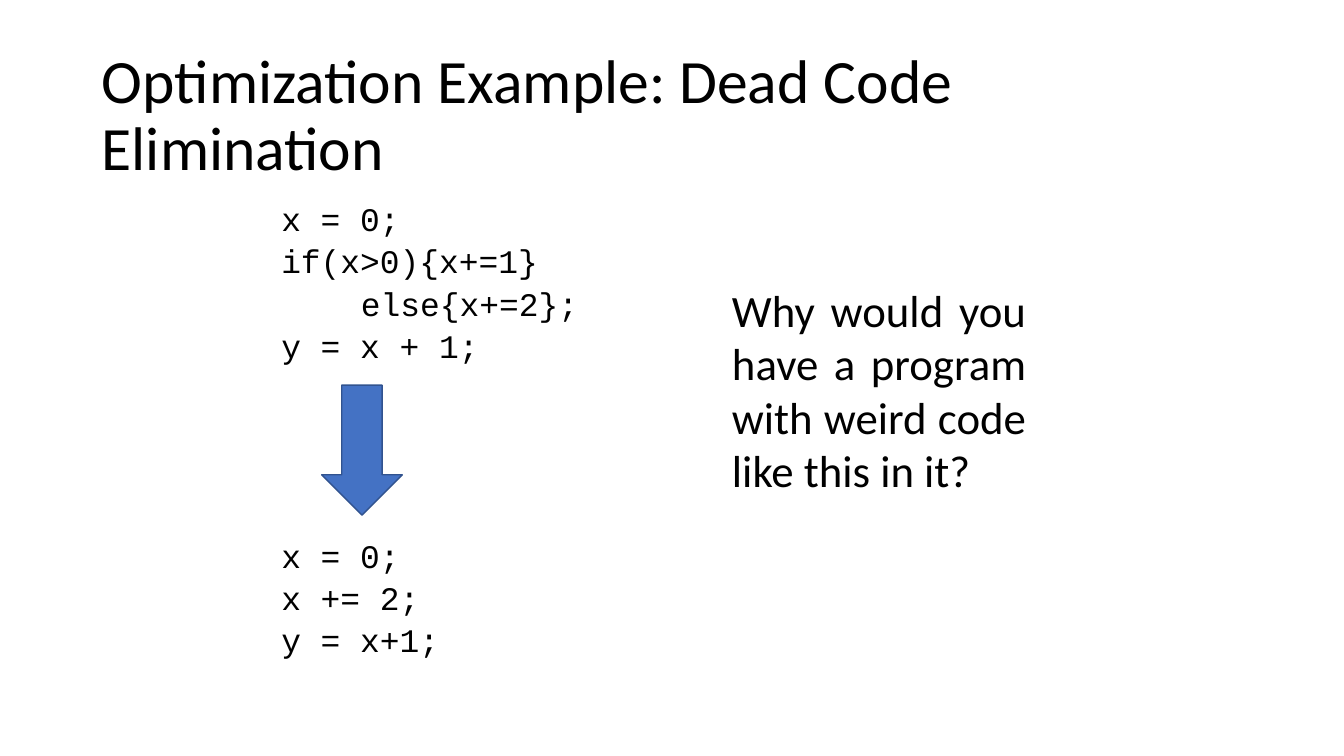
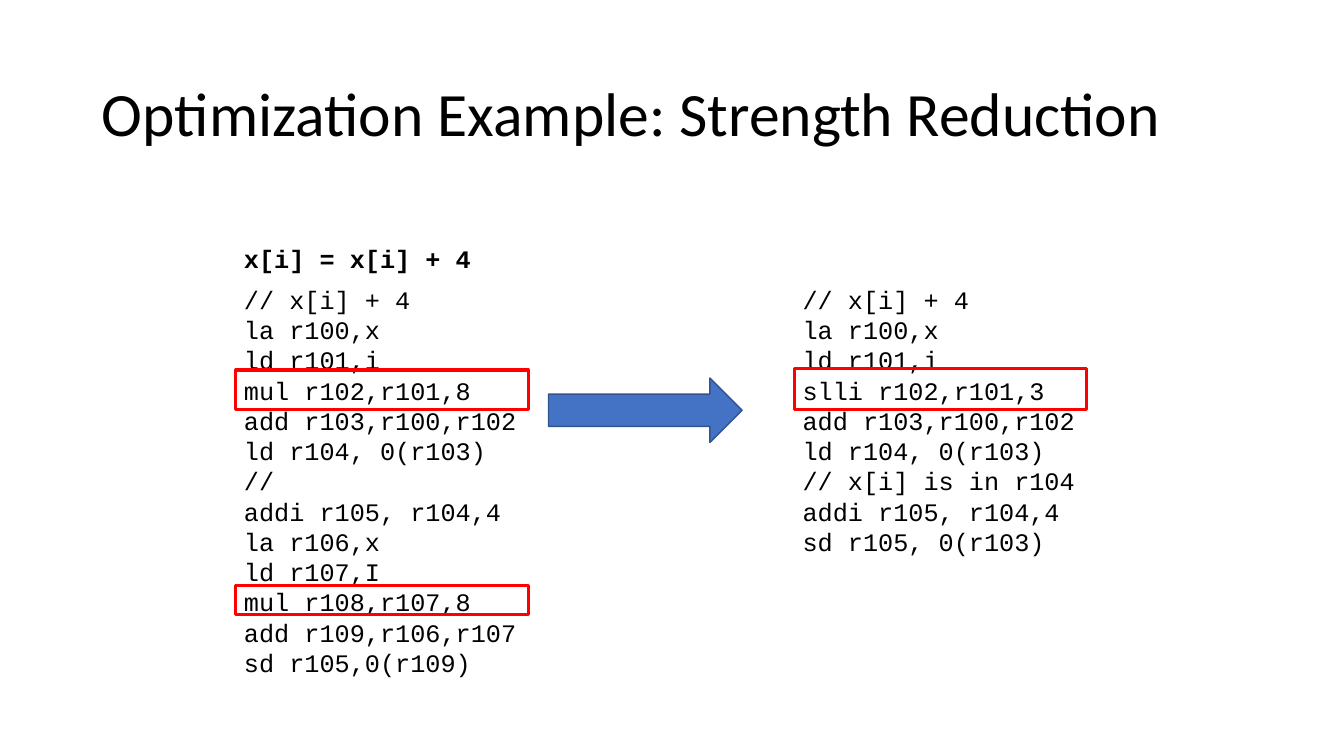
from pptx import Presentation
from pptx.dml.color import RGBColor
from pptx.enum.shapes import MSO_SHAPE as Shape
from pptx.enum.text import MSO_ANCHOR as Anchor, MSO_AUTO_SIZE as AutoSize, PP_ALIGN as Align
from pptx.util import Pt

SCALE = 9144
SLIDE_SIZE = (1333, 750)
TITLE_BOX = (101, 37, 1100, 156)
BLACK, BLUE, NAVY, RED = "000000", "4472C4", "31538F", "FF0000"
BODY_FONT, CODE_FONT = "Calibri", "Courier New"
LINE_STEP = 30


def px(length):
    """Turn px into EMU."""
    return length * SCALE


def colour(hex_code):
    """Turn a hex string into a colour."""
    return RGBColor.from_string(hex_code)


def style(paragraph, font_name, size, pitch, align=Align.LEFT):
    """Set the font, line pitch and alignment of a paragraph."""
    font = paragraph.font
    font.name, font.size = font_name, Pt(size)
    font.color.rgb = colour(BLACK)
    paragraph.line_spacing = Pt(pitch)
    paragraph.alignment = align


def clear_frame(frame, anchor=Anchor.TOP):
    """Make a text frame wrap, without margins or resizing."""
    frame.margin_left = frame.margin_right = frame.margin_top = frame.margin_bottom = 0
    frame.word_wrap = True
    frame.auto_size = AutoSize.NONE
    frame.vertical_anchor = anchor


def add_titled_slide(deck, heading):
    """Add a title-only slide with the shared title style."""
    slide = deck.slides.add_slide(deck.slide_layouts[5])
    title = slide.shapes.title
    title.left, title.top, title.width, title.height = map(px, TITLE_BOX)
    title.text_frame.text = heading
    clear_frame(title.text_frame, Anchor.MIDDLE)
    style(title.text_frame.paragraphs[0], BODY_FONT, 44, 47.5)
    return slide


def add_text(slide, box, lines, font_name, size, pitch, align=Align.LEFT):
    """Write one paragraph per line in a box and return the paragraphs."""
    frame = slide.shapes.add_textbox(*map(px, box)).text_frame
    clear_frame(frame)
    frame.text = "\n".join(lines)
    for paragraph in frame.paragraphs:
        style(paragraph, font_name, size, pitch, align)
    return frame.paragraphs


def add_arrow(slide, kind, box):
    """Draw a blue block arrow."""
    arrow = slide.shapes.add_shape(kind, *map(px, box))
    arrow.shadow.inherit = False
    arrow.fill.solid()
    arrow.fill.fore_color.rgb = colour(BLUE)
    arrow.line.color.rgb = colour(NAVY)
    arrow.line.width = Pt(1)


def add_highlight(slide, box):
    """Frame an instruction in red."""
    outline = slide.shapes.add_shape(Shape.RECTANGLE, *map(px, box))
    outline.shadow.inherit = False
    outline.fill.background()
    outline.line.color.rgb = colour(RED)
    outline.line.width = Pt(2.25)


def add_assembly(slide, left, top, lines, highlights, source=None):
    """Place a listing, its optional source line above, and its highlights."""
    height = LINE_STEP * len(lines)
    if source:
        heading = add_text(slide, (left, top - 41, 280, LINE_STEP), [source], CODE_FONT, 18, 21.6)
        heading[0].font.bold = True
    add_text(slide, (left, top, 280, height), lines, CODE_FONT, 18, 21.6)
    for row, rise, tall in highlights:
        add_highlight(slide, (left - 8, top + row * LINE_STEP - rise, 290, tall))


def build_dead_code(deck):
    """Build the dead code elimination slide."""
    slide = add_titled_slide(deck, "Optimization Example: Dead Code Elimination")
    before = add_text(slide, (279, 194, 310, 169),
                      ["x = 0;", "if(x>0){x+=1}", "else{x+=2};", "y = x + 1;"],
                      CODE_FONT, 23.5, 30.3)
    before[2]._p.get_or_add_pPr().set("marL", str(px(79)))
    add_arrow(slide, Shape.DOWN_ARROW, (319, 382, 80, 129))
    add_text(slide, (279, 528, 310, 127), ["x = 0;", "x += 2;", "y = x+1;"],
             CODE_FONT, 23.5, 30.3)
    add_text(slide, (726, 281, 292, 213),
             ["Why would you have a program with weird code like this in it?"],
             BODY_FONT, 32, 38.1, Align.JUSTIFY)


def build_strength_reduction(deck):
    """Build the strength reduction slide."""
    slide = add_titled_slide(deck, "Optimization Example: Strength Reduction")
    load = ["// x[i] + 4", "la r100,x", "ld r101,i"]
    fetch = ["add r103,r100,r102", "ld r104, 0(r103)"]
    add_assembly(
        slide, 242, 282,
        [*load, "mul r102,r101,8", *fetch, "//", "addi r105, r104,4", "la r106,x",
         "ld r107,I", "mul r108,r107,8", "add r109,r106,r107", "sd r105,0(r109)"],
        [(3, 5, 39), (10, 1, 29)], "x[i] = x[i] + 4")
    add_assembly(
        slide, 796, 282,
        [*load, "slli r102,r101,3", *fetch, "// x[i] is in r104",
         "addi r105, r104,4", "sd r105, 0(r103)"],
        [(3, 6, 40)])
    add_arrow(slide, Shape.RIGHT_ARROW, (544, 375, 192, 64))


def main():
    """Build and save the deck."""
    deck = Presentation()
    deck.slide_width, deck.slide_height = map(px, SLIDE_SIZE)
    build_dead_code(deck)
    build_strength_reduction(deck)
    deck.save("out.pptx")


if __name__ == "__main__":
    main()
